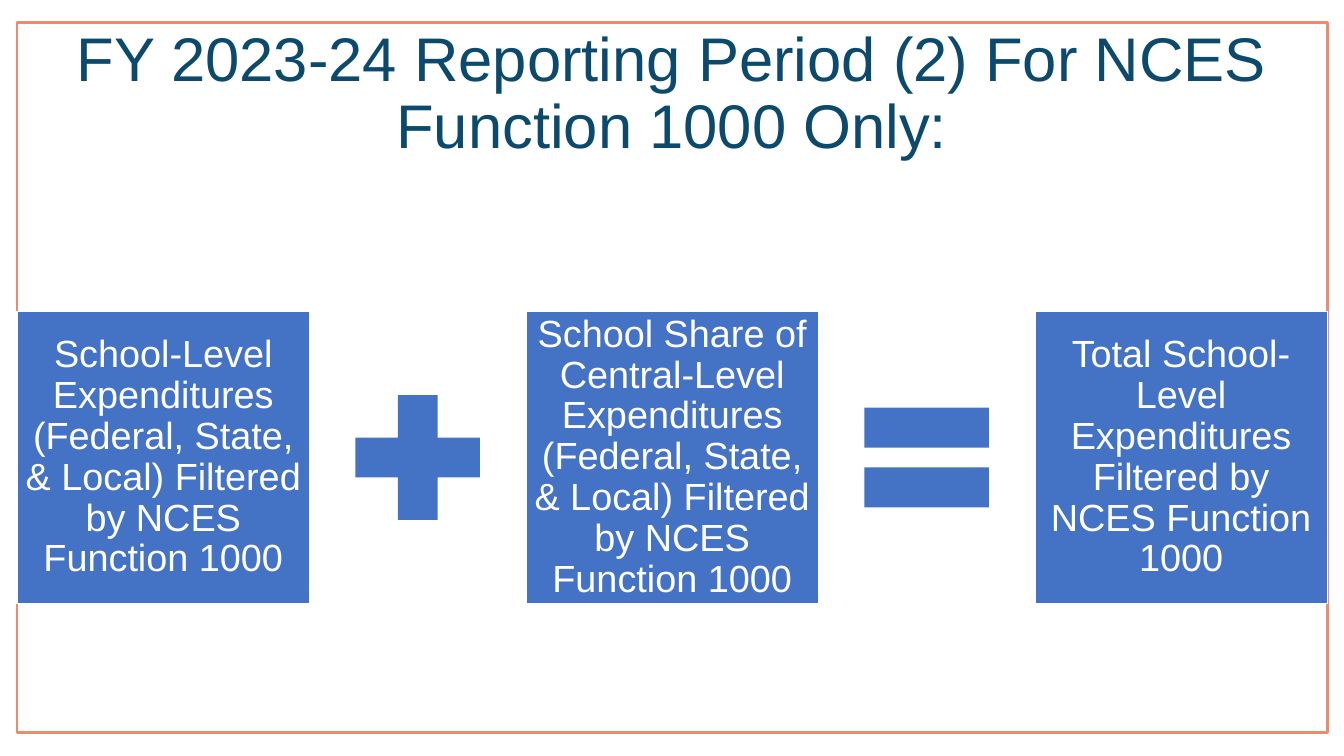
import pptx
import pptx.util
import pptx.dml.color
import pptx.enum.shapes
import pptx.enum.text

Cm = pptx.util.Cm
Pt = pptx.util.Pt
RGBColor = pptx.dml.color.RGBColor
MSO_SHAPE = pptx.enum.shapes.MSO_SHAPE

# Content
TITLE = "FY 2023-24 Reporting Period (2) For NCES Function 1000 Only:"
TERMS = [
    "School-Level Expenditures (Federal, State, & Local) Filtered by NCES Function 1000",
    "School Share of Central-Level Expenditures (Federal, State, & Local) "
    "Filtered by NCES Function 1000",
    "Total School-Level Expenditures Filtered by NCES Function 1000",
]
OPERATORS = [MSO_SHAPE.MATH_PLUS, MSO_SHAPE.MATH_EQUAL]

# Style
FONT = "Arial"
NAVY = RGBColor(0x0C, 0x4A, 0x6D)
BLUE = RGBColor(0x44, 0x72, 0xC4)
CORAL = RGBColor(0xED, 0x8B, 0x6F)
WHITE = RGBColor(0xFF, 0xFF, 0xFF)

# Layout
FRAME_LEFT, FRAME_TOP = Cm(0.43), Cm(0.56)
FRAME_WIDTH, FRAME_HEIGHT = Cm(33.02), Cm(17.91)
TITLE_HEIGHT = Cm(3.68)
TERM_SIZE = Cm(7.37)
OPERATOR_SIZE = Cm(4.27)
ROW_MIDDLE = Cm(11.53)
GAP = (FRAME_WIDTH - len(TERMS) * TERM_SIZE) // len(OPERATORS)


def write_text(shape, text, size, color):
    frame = shape.text_frame
    frame.word_wrap = True
    frame.auto_size = pptx.enum.text.MSO_AUTO_SIZE.NONE
    frame.vertical_anchor = pptx.enum.text.MSO_ANCHOR.MIDDLE
    paragraph = frame.paragraphs[0]
    paragraph.alignment = pptx.enum.text.PP_ALIGN.CENTER
    paragraph.line_spacing = 0.9
    run = paragraph.add_run()
    run.text = text
    run.font.name = FONT
    run.font.size = Pt(size)
    run.font.color.rgb = color


def add_box(slide, kind, left, top, width, height, fill=None, line=None, line_width=1):
    shape = slide.shapes.add_shape(kind, left, top, width, height)
    shape.shadow.inherit = False
    if fill is None:
        shape.fill.background()
    else:
        shape.fill.solid()
        shape.fill.fore_color.rgb = fill
    if line is None:
        shape.line.fill.background()
    else:
        shape.line.color.rgb = line
        shape.line.width = Pt(line_width)
    return shape


def main():
    presentation = pptx.Presentation()
    presentation.slide_width, presentation.slide_height = Cm(33.87), Cm(19.05)
    slide = presentation.slides.add_slide(presentation.slide_layouts[5])

    # Frame and title
    add_box(slide, MSO_SHAPE.RECTANGLE, FRAME_LEFT, FRAME_TOP,
            FRAME_WIDTH, FRAME_HEIGHT, line=CORAL, line_width=2)
    title = slide.shapes.title
    title.left, title.top = FRAME_LEFT, FRAME_TOP
    title.width, title.height = FRAME_WIDTH, TITLE_HEIGHT
    write_text(title, TITLE, 44, NAVY)

    # Terms of the equation
    for index, term in enumerate(TERMS):
        left = FRAME_LEFT + index * (TERM_SIZE + GAP)
        box = add_box(slide, MSO_SHAPE.RECTANGLE, left, ROW_MIDDLE - TERM_SIZE // 2,
                      TERM_SIZE, TERM_SIZE, fill=BLUE, line=WHITE)
        frame = box.text_frame
        frame.margin_left = frame.margin_right = Cm(0.1)
        frame.margin_top = frame.margin_bottom = Cm(0.1)
        write_text(box, term, 27, WHITE)

    # Operators centred in the gaps
    for index, operator in enumerate(OPERATORS):
        gap_left = FRAME_LEFT + (index + 1) * TERM_SIZE + index * GAP
        add_box(slide, operator, gap_left + (GAP - OPERATOR_SIZE) // 2,
                ROW_MIDDLE - OPERATOR_SIZE // 2, OPERATOR_SIZE, OPERATOR_SIZE, fill=BLUE)

    presentation.save("out.pptx")


if __name__ == "__main__":
    main()
